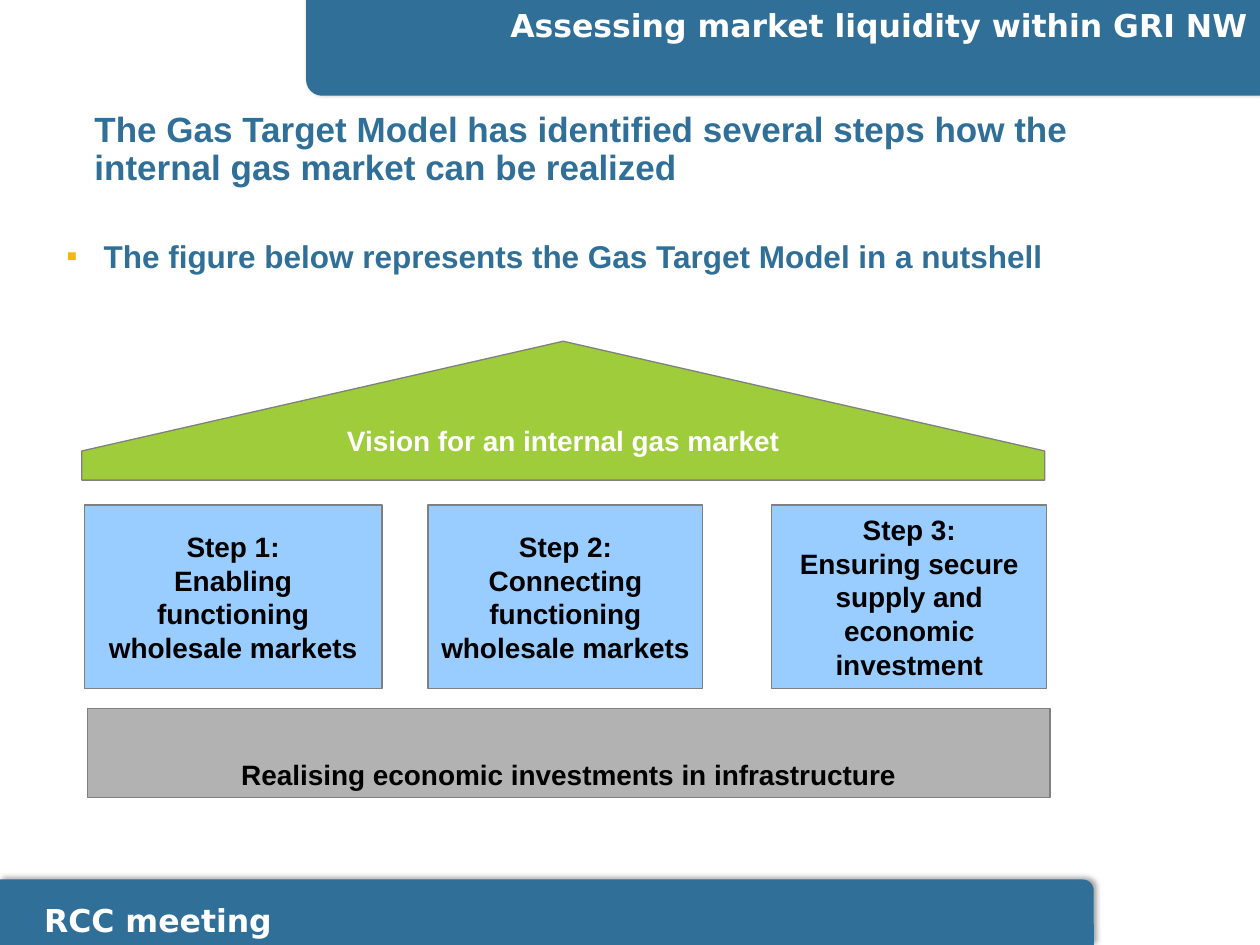
import pptx
import pptx.util
import pptx.dml.color
import pptx.enum.shapes
import pptx.enum.text
import pptx.oxml
import pptx.oxml.ns

Cm, Pt = pptx.util.Cm, pptx.util.Pt
SHAPE = pptx.enum.shapes.MSO_SHAPE
ALIGN = pptx.enum.text.PP_ALIGN
ANCHOR = pptx.enum.text.MSO_ANCHOR

# Content
HEADER = "Assessing market liquidity within GRI NW"
FOOTER = "RCC meeting"
TITLE = ("The Gas Target Model has identified several steps how the "
         "internal gas market can be realized")
BULLET = "The figure below represents the Gas Target Model in a nutshell"
ROOF = "Vision for an internal gas market"
BASE = "Realising economic investments in infrastructure"
STEPS = [  # text, width in cm
    ("Enabling functioning wholesale markets", 6),
    ("Connecting functioning wholesale markets", 5.54),
    ("Ensuring secure supply and economic investment", 5.54),
]
COLORS = {"band": "307098", "roof": "9ECC3B", "step": "99CCFF", "base": "B2B2B2",
          "outline": "808080", "bullet": "F7B909", "white": "FFFFFF", "black": "000000"}

# Layout in cm
HOUSE_WIDTH, STEP_LEFT, STEP_PITCH = 19.41, 1.7, 6.93


def rgb(name):
    return pptx.dml.color.RGBColor.from_string(COLORS[name])


def set_text(shape, text, size, color, font="Arial", align=ALIGN.LEFT, anchor=ANCHOR.TOP):
    frame = shape.text_frame
    frame.text = text
    frame.word_wrap = True
    frame.vertical_anchor = anchor
    para = frame.paragraphs[0]
    para.alignment = align
    for span in para.runs:
        span.font.name, span.font.size, span.font.bold = font, Pt(size), True
        span.font.color.rgb = rgb(color)
    return para


def add_block(kind, box, fill):
    shape = page.shapes.add_shape(kind, *[Cm(value) for value in box])
    shape.shadow.inherit = False
    shape.fill.solid()
    shape.fill.fore_color.rgb = rgb(fill)
    shape.line.color.rgb = rgb("outline")
    shape.line.width = Pt(0.75)
    return shape


def add_band(box, rotation=0):
    band = add_block(SHAPE.ROUND_1_RECTANGLE, box, "band")
    band.line.fill.background()
    band.rotation = rotation
    effects = band._element.spPr.find(pptx.oxml.ns.qn("a:effectLst"))
    effects.append(pptx.oxml.parse_xml(
        f'<a:outerShdw {pptx.oxml.ns.nsdecls("a")} blurRad="{Pt(3.1)}" dist="{Pt(1.8)}" '
        f'dir="{306 * 60000}" rotWithShape="0"><a:srgbClr val="{COLORS["black"]}">'
        '<a:alpha val="35000"/></a:srgbClr></a:outerShdw>'))


def add_label(box, *text, **style):
    label = page.shapes.add_textbox(*[Cm(value) for value in box])
    return set_text(label, *text, **style)


deck = pptx.Presentation()
deck.slide_width, deck.slide_height = Cm(25.4), Cm(19.05)
page = deck.slides.add_slide(deck.slide_layouts[5])

# Header and footer bands
add_band((0, 17.73, 22.05, 1.32))
add_band((6.17, 0, 19.23, 1.93), rotation=180)
add_label((0.64, 18.03, 10.44, 1.02), FOOTER, 18, "white", font="DejaVu Sans")
add_label((5.64, 0, 19.76, 1.02), HEADER, 18, "white", font="DejaVu Sans", align=ALIGN.RIGHT)

# Title
title = page.shapes.title
title.left, title.top, title.width, title.height = Cm(1.65), Cm(2.18), Cm(21.39), Cm(1.7)
title.text_frame.auto_size = pptx.enum.text.MSO_AUTO_SIZE.NONE
set_text(title, TITLE, 20, "band", anchor=ANCHOR.MIDDLE).line_spacing = 0.9

# Bullet line
bullet = add_label((1.09, 4.65, 22.5, 1.02), BULLET, 18, "band")
properties = bullet._p.get_or_add_pPr()
properties.set("marL", str(Cm(0.75)))
properties.set("indent", str(-Cm(0.75)))
for markup in (f'<a:buClr {{}}><a:srgbClr val="{COLORS["bullet"]}"/></a:buClr>',
               '<a:buFont {} typeface="Arial"/>', '<a:buChar {} char="▪"/>'):
    properties.append(pptx.oxml.parse_xml(markup.format(pptx.oxml.ns.nsdecls("a"))))

# House: base, roof and the three steps between them
base = add_block(SHAPE.RECTANGLE, (1.76, 14.28, HOUSE_WIDTH, 1.8), "base")
set_text(base, BASE, 16, "black", align=ALIGN.CENTER, anchor=ANCHOR.BOTTOM)

roof = add_block(SHAPE.UP_ARROW, (1.65, 6.88, HOUSE_WIDTH, 2.8), "roof")
roof.adjustments[0], roof.adjustments[1] = 1, 0.79
set_text(roof, ROOF, 16, "white", align=ALIGN.CENTER, anchor=ANCHOR.BOTTOM)
roof.text_frame.margin_bottom = Cm(0.71)

for index, (text, width) in enumerate(STEPS):
    step = add_block(SHAPE.RECTANGLE,
                     (STEP_LEFT + index * STEP_PITCH, 10.18, width, 3.7), "step")
    set_text(step, "", 16, "black", anchor=ANCHOR.MIDDLE)
    step.text_frame.paragraphs[0].text = f"Step {index + 1}:\v{text}"
    para = set_text(step, step.text_frame.text, 16, "black",
                    align=ALIGN.CENTER, anchor=ANCHOR.MIDDLE)

deck.save("out.pptx")
